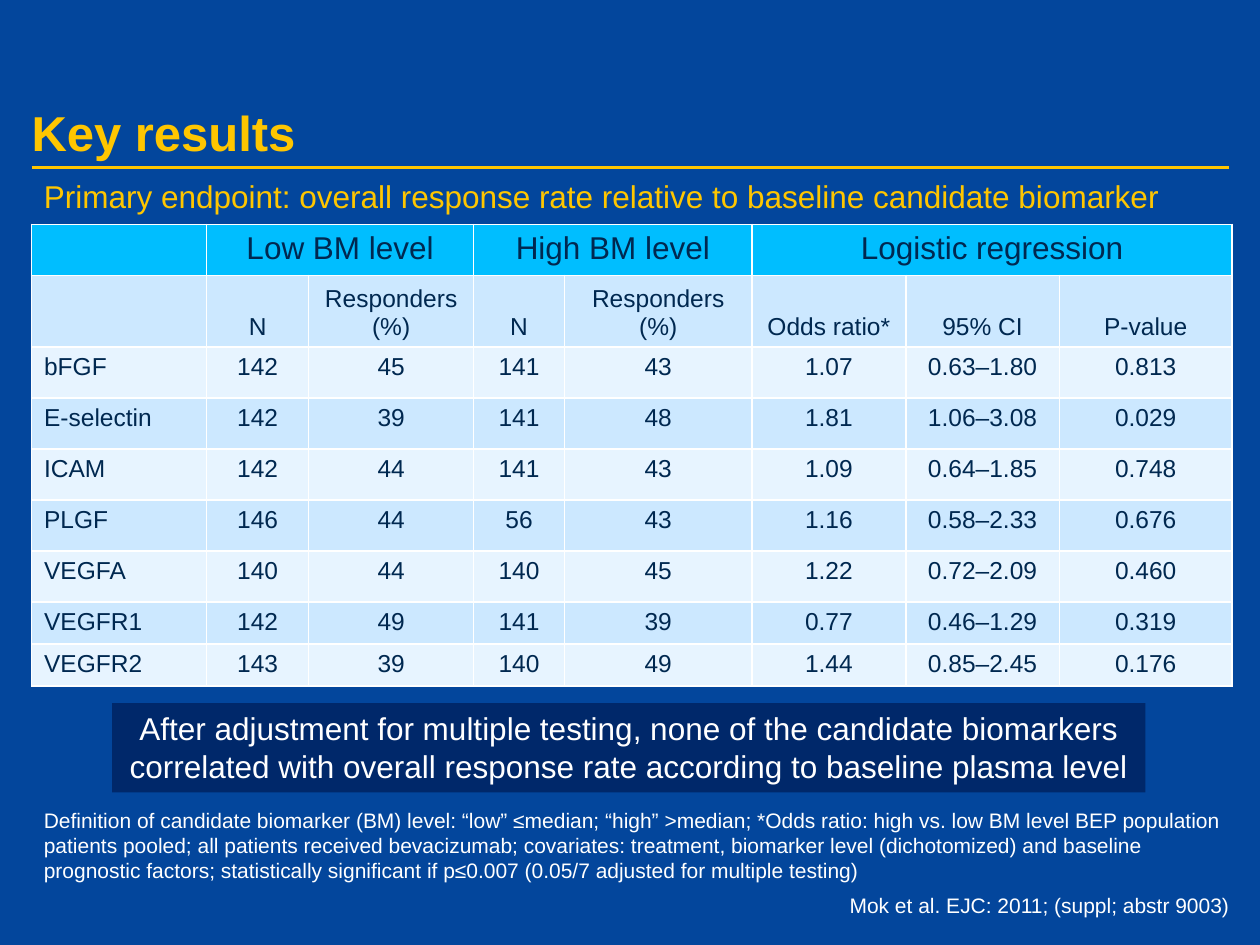
from dataclasses import dataclass

from lxml import etree
from pptx import Presentation
from pptx.dml.color import RGBColor
from pptx.enum.shapes import MSO_CONNECTOR, MSO_SHAPE
from pptx.enum.text import MSO_ANCHOR, MSO_AUTO_SIZE, PP_ALIGN
from pptx.oxml.ns import qn
from pptx.util import Emu, Inches, Pt

LEFT, CENTER, RIGHT = PP_ALIGN.LEFT, PP_ALIGN.CENTER, PP_ALIGN.RIGHT
TOP, BOTTOM = MSO_ANCHOR.TOP, MSO_ANCHOR.BOTTOM
FIT_SHAPE, NO_FIT = MSO_AUTO_SIZE.SHAPE_TO_FIT_TEXT, MSO_AUTO_SIZE.NONE
RECTANGLE, STRAIGHT = MSO_SHAPE.RECTANGLE, MSO_CONNECTOR.STRAIGHT
SLIDE_WIDTH, SLIDE_HEIGHT = Inches(10), Inches(7.5)


@dataclass(frozen=True)
class Theme:
    font: str = "Arial"
    background: str = "03469C"
    accent: str = "FFC600"
    white: str = "FFFFFF"
    ink: str = "002850"
    header: str = "00BEFF"
    bands: tuple[str, str] = ("CCE8FF", "E7F4FF")
    callout: str = "00286A"
    title_size: float = 28
    heading_size: float = 18
    body_size: float = 14
    note_size: float = 12
    rule_width: float = 2.25
    border_width: float = 1


THEME = Theme()


@dataclass(frozen=True)
class Box:
    """Percentages of the slide's width and height."""

    left: float
    top: float
    width: float
    height: float

    def lengths(self) -> tuple[Emu, Emu, Emu, Emu]:
        return across(self.left), down(self.top), across(self.width), down(self.height)


@dataclass(frozen=True)
class TextBlock:
    text: str
    box: Box
    size: float
    color: str
    align: PP_ALIGN = LEFT
    anchor: MSO_ANCHOR = TOP
    wrap: bool = False
    insets: bool = True
    space_before: float = 0
    fill: str | None = None


@dataclass(frozen=True)
class HeaderGroup:
    text: str
    first_column: int
    last_column: int


COLUMN_WIDTHS = (13.9, 8.1, 13.1, 7.2, 14.9, 12.2, 12.2, 13.7)
ROW_HEIGHTS = (5.4, 7.6) + (5.4,) * 5 + (4.4,) * 2
TABLE_BOX = Box(2.5, 23.73, sum(COLUMN_WIDTHS), sum(ROW_HEIGHTS))
TITLE_BOX = Box(2.5, 3.33, 95, 13.73)
RULE_BOX = Box(2.5, 17.73, 95, 0)

HEADER_GROUPS = (
    HeaderGroup("Low BM level", 1, 2),
    HeaderGroup("High BM level", 3, 4),
    HeaderGroup("Logistic regression", 5, 7),
)
TABLE_ROWS = (
    ("", "N", "Responders (%)", "N", "Responders (%)", "Odds ratio*", "95% CI", "P-value"),
    ("bFGF", "142", "45", "141", "43", "1.07", "0.63–1.80", "0.813"),
    ("E-selectin", "142", "39", "141", "48", "1.81", "1.06–3.08", "0.029"),
    ("ICAM", "142", "44", "141", "43", "1.09", "0.64–1.85", "0.748"),
    ("PLGF", "146", "44", "56", "43", "1.16", "0.58–2.33", "0.676"),
    ("VEGFA", "140", "44", "140", "45", "1.22", "0.72–2.09", "0.460"),
    ("VEGFR1", "142", "49", "141", "39", "0.77", "0.46–1.29", "0.319"),
    ("VEGFR2", "143", "39", "140", "49", "1.44", "0.85–2.45", "0.176"),
)

REFERENCE = TextBlock(
    "Mok et al. EJC: 2011; (suppl; abstr 9003)",
    Box(67.2, 94.4, 30.4, 2.67), THEME.note_size, THEME.white,
    align=RIGHT, anchor=BOTTOM, insets=False,
)
SUBTITLE = TextBlock(
    "Primary endpoint: overall response rate relative to baseline candidate biomarker",
    Box(2.5, 18.05, 95.1, 5.4), THEME.heading_size, THEME.accent,
    wrap=True, space_before=0.2 * THEME.heading_size,
)
FOOTNOTE = TextBlock(
    "Definition of candidate biomarker (BM) level: “low” ≤median; “high” >median; "
    "*Odds ratio: high vs. low BM level BEP population\n"
    "patients pooled; all patients received bevacizumab; covariates: treatment, "
    "biomarker level (dichotomized) and baseline \n"
    "prognostic factors; statistically significant if p≤0.007 "
    "(0.05/7 adjusted for multiple testing)",
    Box(2.5, 84.8, 96.6, 9.47), THEME.note_size, THEME.white,
)
CALLOUT = TextBlock(
    "After adjustment for multiple testing, none of the candidate biomarkers\n"
    "correlated with overall response rate according to baseline plasma level",
    Box(8.9, 74.4, 82, 9.47), THEME.heading_size, THEME.white,
    align=CENTER, fill=THEME.callout,
)


def across(share: float) -> Emu:
    return Emu(round(SLIDE_WIDTH * share / 100))


def down(share: float) -> Emu:
    return Emu(round(SLIDE_HEIGHT * share / 100))


def rgb(color: str) -> RGBColor:
    return RGBColor.from_string(color)


def write(frame, text: str, size: float, color: str, align: PP_ALIGN, bold: bool = False):
    paragraph = frame.paragraphs[0]
    paragraph.text = text
    paragraph.alignment = align
    for run in paragraph.runs:
        run.font.name = THEME.font
        run.font.size = Pt(size)
        run.font.bold = bold
        run.font.color.rgb = rgb(color)
    return paragraph


def clear_insets(frame) -> None:
    frame.margin_left = frame.margin_right = frame.margin_top = frame.margin_bottom = 0


def draw_title(slide, text: str) -> None:
    title = slide.shapes.title
    title.left, title.top, title.width, title.height = TITLE_BOX.lengths()
    frame = title.text_frame
    clear_insets(frame)
    frame.margin_top = Inches(0.05)
    frame.vertical_anchor = BOTTOM
    frame.auto_size = NO_FIT
    write(frame, text, THEME.title_size, THEME.accent, LEFT, bold=True)


def draw_rule(slide) -> None:
    left, top, width, _ = RULE_BOX.lengths()
    rule = slide.shapes.add_connector(STRAIGHT, left, top, left + width, top)
    rule.line.color.rgb = rgb(THEME.accent)
    rule.line.width = Pt(THEME.rule_width)
    etree.SubElement(rule._element.spPr, qn("a:effectLst"))


def draw_text(slide, block: TextBlock) -> None:
    if block.fill:
        shape = slide.shapes.add_shape(RECTANGLE, *block.box.lengths())
        shape.shadow.inherit = False
        shape.fill.solid()
        shape.fill.fore_color.rgb = rgb(block.fill)
        shape.line.fill.background()
    else:
        shape = slide.shapes.add_textbox(*block.box.lengths())
    frame = shape.text_frame
    frame.word_wrap = block.wrap
    frame.auto_size = FIT_SHAPE
    frame.vertical_anchor = block.anchor
    if not block.insets:
        clear_insets(frame)
    paragraph = write(frame, block.text, block.size, block.color, block.align)
    paragraph.space_before = Pt(block.space_before)


def style_cell(cell, fill: str) -> None:
    properties = cell._tc.get_or_add_tcPr()
    for side in ("lnL", "lnR", "lnT", "lnB"):
        border = etree.SubElement(properties, qn(f"a:{side}"), w=str(Pt(THEME.border_width)))
        solid = etree.SubElement(border, qn("a:solidFill"))
        etree.SubElement(solid, qn("a:srgbClr"), val=THEME.white)
    cell.fill.solid()
    cell.fill.fore_color.rgb = rgb(fill)


def draw_table(slide) -> None:
    frame = slide.shapes.add_table(len(ROW_HEIGHTS), len(COLUMN_WIDTHS), *TABLE_BOX.lengths())
    table = frame.table
    table.first_row = table.horz_banding = False
    for column, width in zip(table.columns, COLUMN_WIDTHS):
        column.width = across(width)
    for row, height in zip(table.rows, ROW_HEIGHTS):
        row.height = down(height)
    for cell in table.rows[0].cells:
        style_cell(cell, THEME.header)
    for group in HEADER_GROUPS:
        cell = table.cell(0, group.first_column)
        cell.merge(table.cell(0, group.last_column))
        write(cell.text_frame, group.text, THEME.heading_size, THEME.ink, CENTER)
    for row_index, values in enumerate(TABLE_ROWS):
        for column_index, value in enumerate(values):
            cell = table.cell(row_index + 1, column_index)
            style_cell(cell, THEME.bands[row_index % 2])
            cell.vertical_anchor = TOP if row_index else BOTTOM
            align = CENTER if column_index else LEFT
            write(cell.text_frame, value, THEME.body_size, THEME.ink, align)


def main() -> None:
    presentation = Presentation()
    presentation.slide_width, presentation.slide_height = SLIDE_WIDTH, SLIDE_HEIGHT
    slide = presentation.slides.add_slide(presentation.slide_layouts[5])
    slide.background.fill.solid()
    slide.background.fill.fore_color.rgb = rgb(THEME.background)
    draw_rule(slide)
    draw_title(slide, "Key results")
    draw_text(slide, REFERENCE)
    draw_text(slide, SUBTITLE)
    draw_table(slide)
    draw_text(slide, FOOTNOTE)
    draw_text(slide, CALLOUT)
    presentation.save("out.pptx")


if __name__ == "__main__":
    main()
